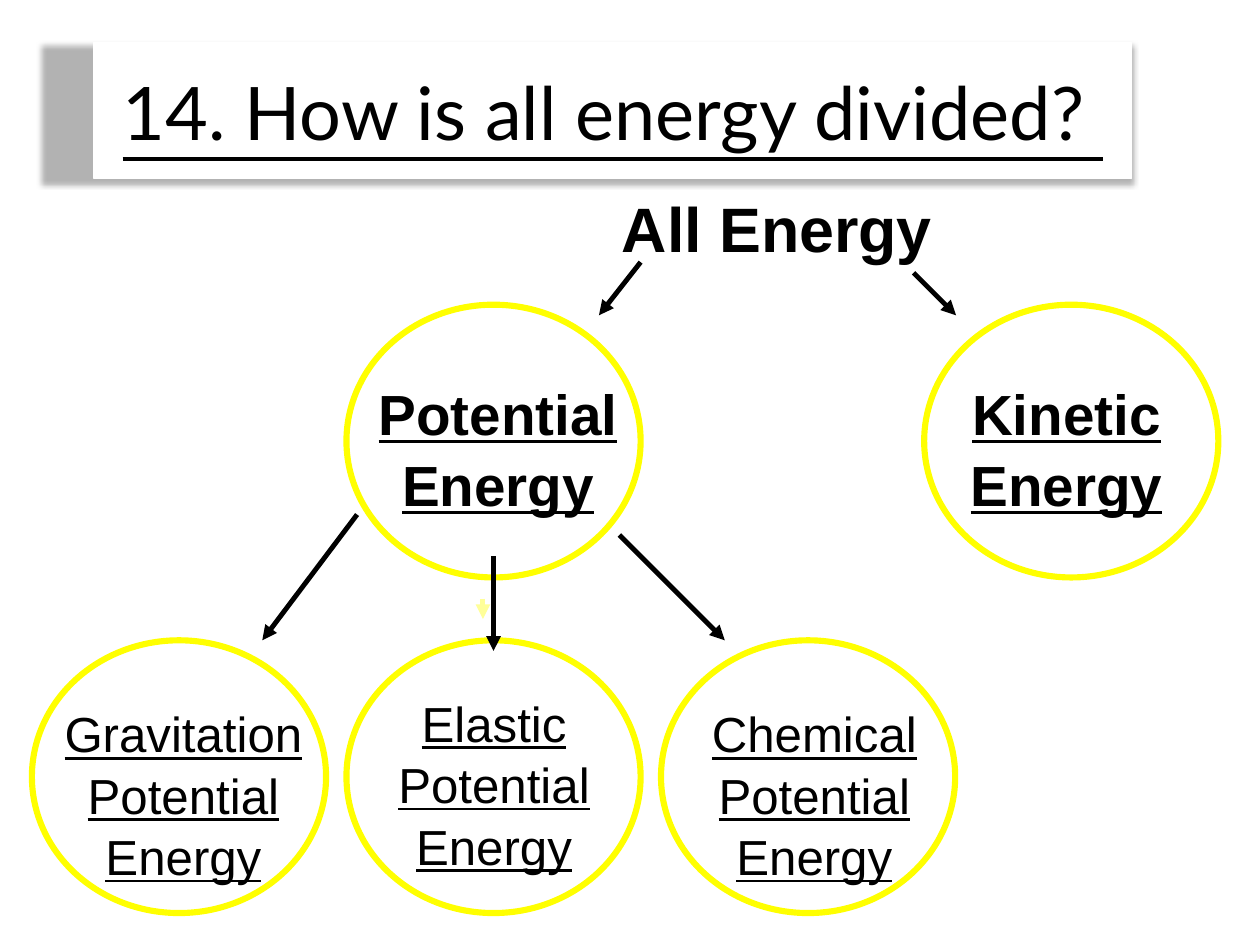
import lxml.etree
import pptx
import pptx.dml.color
import pptx.enum.shapes
import pptx.enum.text
import pptx.oxml
import pptx.oxml.ns
import pptx.util
from pptx.util import Inches

SHAPE = pptx.enum.shapes.MSO_SHAPE
ALIGN = pptx.enum.text.PP_ALIGN
ANCHOR = pptx.enum.text.MSO_ANCHOR


class Theme:
    ink = "000000"
    paper = "FFFFFF"
    ring = "FFFF00"
    pale = "FFFF99"
    ring_width = 5
    arrow_width = 4
    line_space = 1.04
    title = {"name": "Lato", "size": 60, "underline": True}
    root = {"name": "Arial", "size": 51, "bold": True}
    main = {"name": "Arial", "size": 46, "bold": True, "underline": True}
    leaf = {"name": "Arial", "size": 40, "underline": True}


def tint(code):
    return pptx.dml.color.RGBColor.from_string(code)


def add_tag(parent, tag, **values):
    node = lxml.etree.SubElement(parent, pptx.oxml.ns.qn(tag))
    for key, value in values.items():
        node.set(key, value)
    return node


class Deck:
    def __init__(self, theme, width, height):
        self.theme = theme
        self.show = pptx.Presentation()
        self.show.slide_width = Inches(width)
        self.show.slide_height = Inches(height)
        self.slide = self.show.slides.add_slide(self.show.slide_layouts[6])

    def stroke(self, line, color, width):
        line.color.rgb = tint(color)
        line.width = pptx.util.Pt(width)

    def set_text(self, frame, lines, style):
        """Fill a text frame with one centred paragraph per line."""
        for index, words in enumerate(lines):
            para = frame.add_paragraph() if index else frame.paragraphs[0]
            para.alignment = ALIGN.CENTER
            run = para.add_run()
            run.text = words
            for key, value in style.items():
                setattr(run.font, key, pptx.util.Pt(value) if key == "size" else value)
            run.font.color.rgb = tint(self.theme.ink)

    def label(self, box, lines, style):
        text = self.slide.shapes.add_textbox(*map(Inches, box))
        frame = text.text_frame
        layout = {"word_wrap": True, "margin_top": Inches(0.1),
                  "margin_left": Inches(0.05), "margin_right": Inches(0.05)}
        for key, value in layout.items():
            setattr(frame, key, value)
        self.set_text(frame, lines, style)
        for para in frame.paragraphs:
            para.line_spacing = self.theme.line_space

    def ring(self, left, top):
        oval = self.slide.shapes.add_shape(
            SHAPE.OVAL, Inches(left), Inches(top), Inches(3.32), Inches(3.08))
        oval.shadow.inherit = False
        oval.fill.background()
        self.stroke(oval.line, self.theme.ring, self.theme.ring_width)

    def arrow(self, start, end, color):
        link = self.slide.shapes.add_connector(
            pptx.enum.shapes.MSO_CONNECTOR.STRAIGHT, *map(Inches, start + end))
        self.stroke(link.line, color, self.theme.arrow_width)
        props = link._element.spPr
        add_tag(props.find(pptx.oxml.ns.qn("a:ln")), "a:tailEnd", type="triangle")
        add_tag(props, "a:effectLst")

    def title(self, box, words):
        card = self.slide.shapes.add_shape(SHAPE.RECTANGLE, *map(Inches, box))
        card.fill.solid()
        card.fill.fore_color.rgb = tint(self.theme.paper)
        self.stroke(card.line, self.theme.paper, 1)
        self.cast(card)
        card.text_frame.word_wrap = True
        card.text_frame.vertical_anchor = ANCHOR.MIDDLE
        self.set_text(card.text_frame, [words], self.theme.title)

    def cast(self, card):
        """Give the card a soft shadow, widened towards the left."""
        card.shadow.inherit = False
        effects = card._element.spPr.find(pptx.oxml.ns.qn("a:effectLst"))
        shade = add_tag(effects, "a:outerShdw", blurRad=str(pptx.util.Pt(5)),
                        dist=str(pptx.util.Pt(3)), dir="5400000",
                        sx="105000", algn="tr", rotWithShape="0")
        color = add_tag(shade, "a:srgbClr", val=self.theme.ink)
        add_tag(color, "a:alpha", val="30000")


def main():
    theme = Theme()
    deck = Deck(theme, 14.22, 10.67)

    deck.label((6.87, 2.01, 3.8, 1), ["All Energy"], theme.root)

    kinds = [
        ("Potential", 3.91, (4.13, 4.15, 2.98, 1.68)),
        ("Kinetic", 10.43, (10.79, 4.15, 2.49, 1.68)),
    ]
    for name, left, box in kinds:
        deck.ring(left, 3.44)
        deck.label(box, [name, "Energy"], theme.main)

    forms = [
        ("Gravitation", (0.47, 7.82, 3.2, 2.14)),
        ("Elastic", (4.27, 7.7, 2.61, 2.14)),
        ("Chemical", (7.59, 7.82, 3.2, 2.14)),
    ]
    for index, (name, box) in enumerate(forms):
        deck.ring(0.36 + 3.55 * index, 7.23)
        deck.label(box, [name, "Potential", "Energy"], theme.leaf)

    arrows = [
        ((10.31, 3.08), (10.79, 3.56), theme.ink),
        ((7.23, 2.96), (6.76, 3.56), theme.ink),
        ((4.03, 5.81), (2.96, 7.23), theme.ink),
        ((6.99, 6.04), (8.18, 7.23), theme.ink),
        ((5.45, 6.76), (5.45, 6.99), theme.pale),
        ((5.57, 6.28), (5.57, 7.35), theme.ink),
    ]
    for start, end, color in arrows:
        deck.arrow(start, end, color)

    deck.title((1.06, 0.48, 11.71, 1.54), "14. How is all energy divided? ")
    deck.show.save("out.pptx")


if __name__ == "__main__":
    main()
